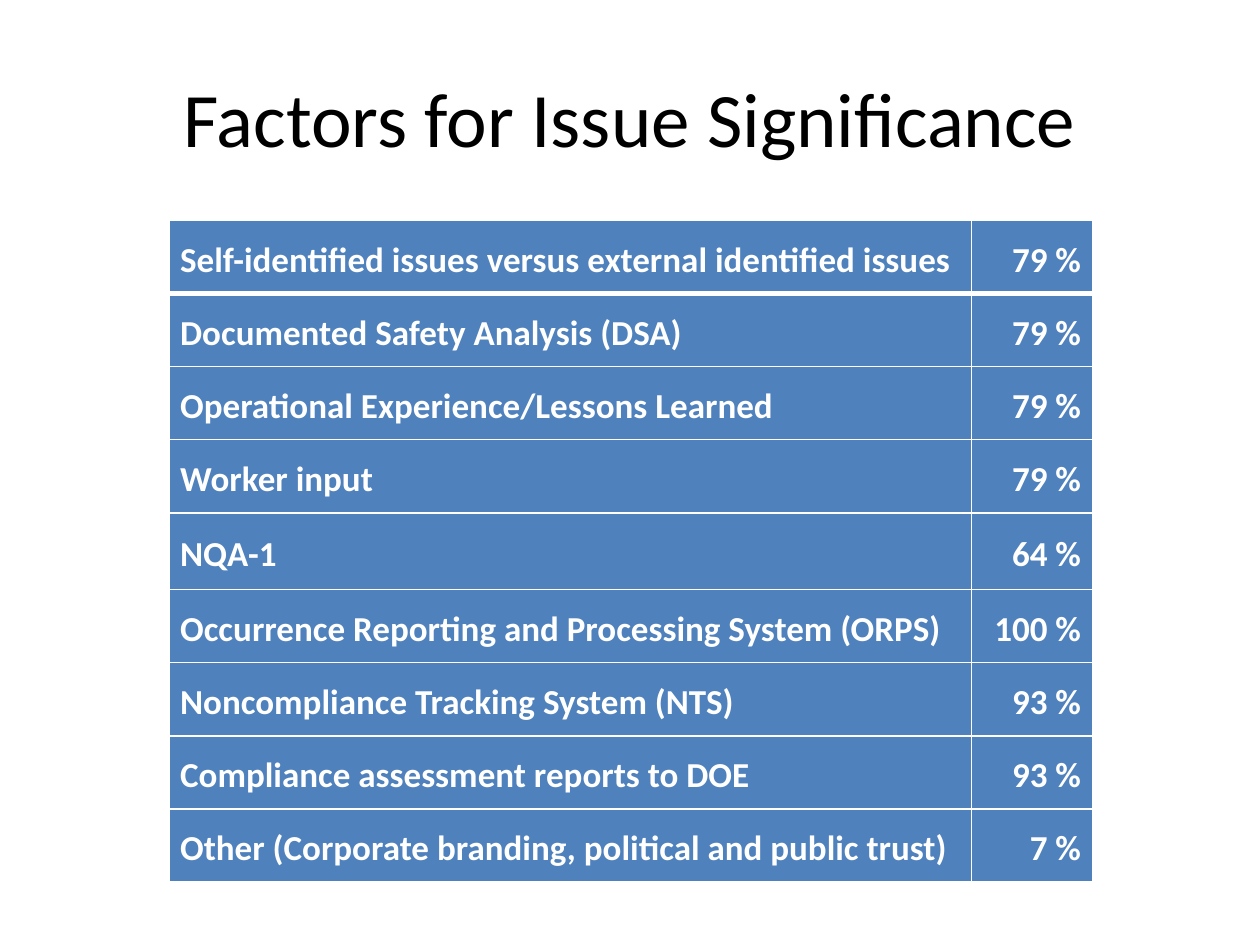
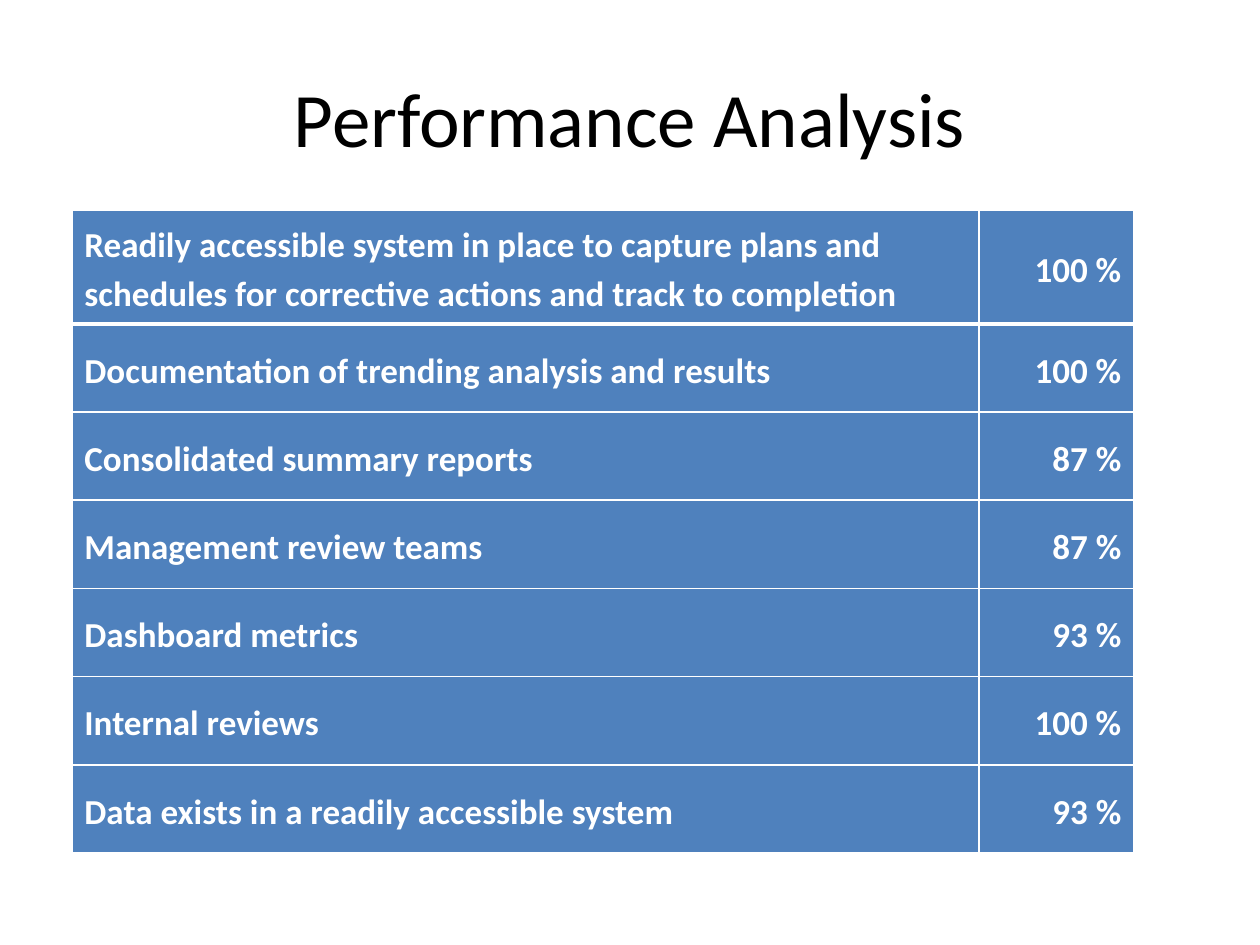
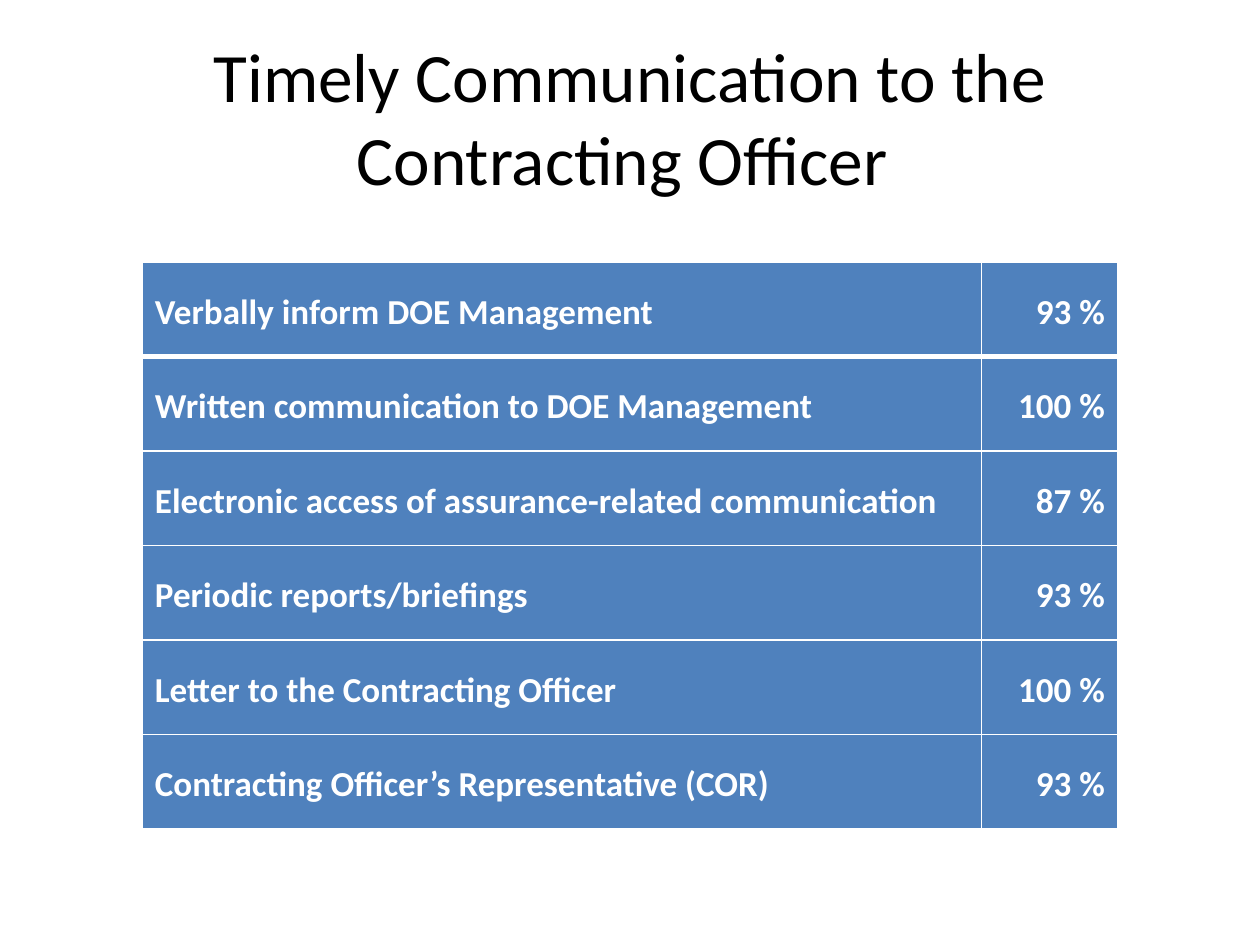
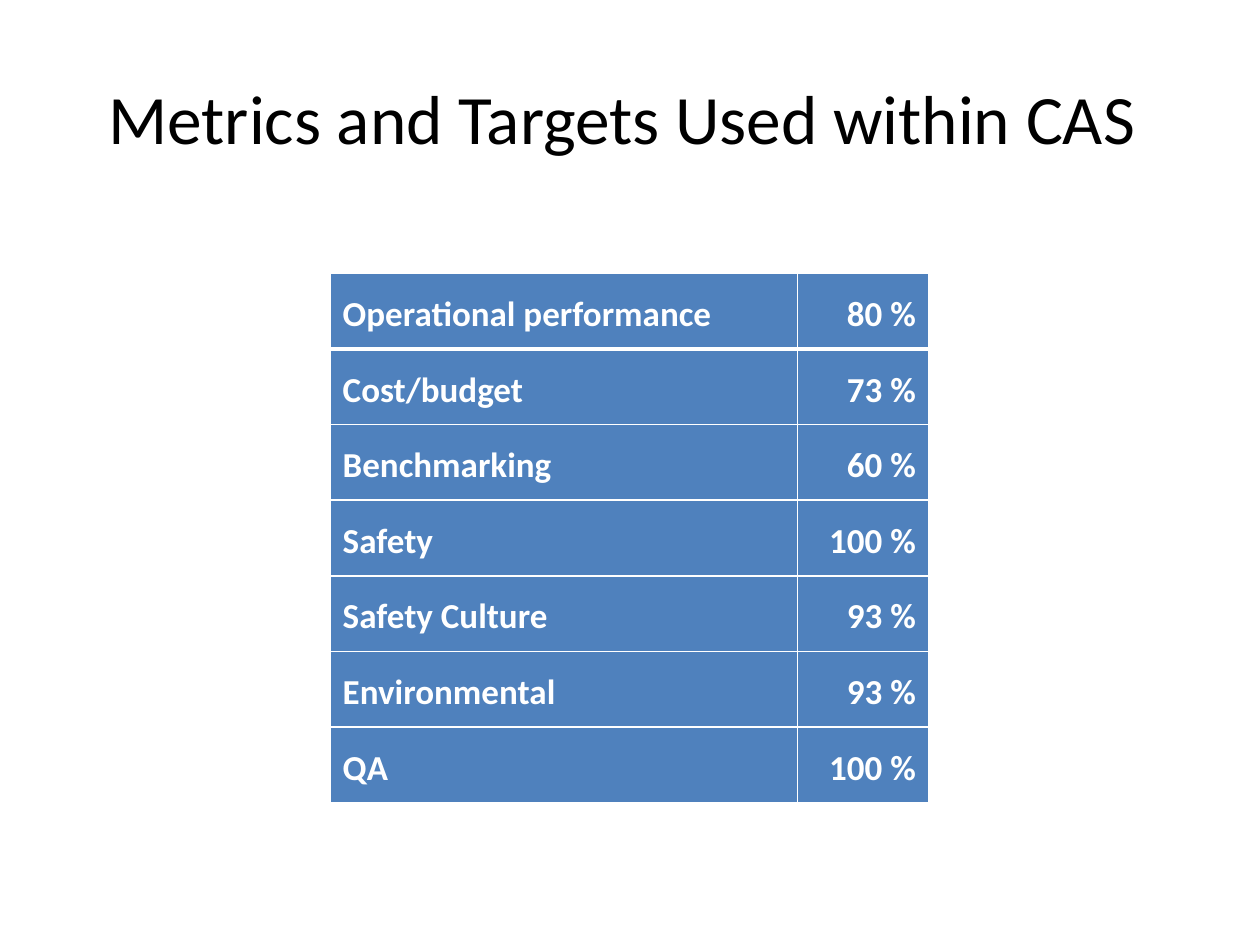
import pptx
import pptx.dml.color
import pptx.enum.text
import pptx.oxml
import pptx.oxml.ns
import pptx.util

Inch = pptx.util.Inches
Align = pptx.enum.text.PP_ALIGN
Middle = pptx.enum.text.MSO_ANCHOR.MIDDLE

WIDE, HIGH = 10, 7.5
COLORS = {"title": "000000", "text": "FFFFFF", "cell": "4F81BD", "rule": "FFFFFF"}
FACE = "Calibri"
TITLE = {"left": 0.05 * WIDE, "top": 0.04 * HIGH, "width": 0.9 * WIDE, "height": HIGH / 6}
BODY = {"name": FACE, "size": pptx.util.Pt(20), "bold": True}
THIN, THICK = 1, 3

# size: title points; at: left and top; cols: column widths; step: row height;
# tall: row heights that differ; pad: side and top insets
SLIDES = [
    {"title": "Factors for Issue Significance", "size": 44,
     "at": (1.34, 1.75), "cols": (6.37, 0.96), "step": 0.58, "tall": {4: 0.61},
     "pad": (0.09, 0.04),
     "rows": [
         ("Self-identified issues versus external identified issues", 79),
         ("Documented Safety Analysis (DSA)", 79),
         ("Operational Experience/Lessons Learned", 79),
         ("Worker input", 79),
         ("NQA-1", 64),
         ("Occurrence Reporting and Processing System (ORPS)", 100),
         ("Noncompliance Tracking System (NTS)", 93),
         ("Compliance assessment reports to DOE", 93),
         ("Other (Corporate branding, political and public trust)", 7)]},
    {"title": "Performance Analysis", "size": 44,
     "at": (0.57, 1.67), "cols": (7.2, 1.23), "step": 0.7, "tall": {0: 0.9},
     "pad": (0.1, 0.05),
     "rows": [
         ("Readily accessible system in place to capture plans and "
          "schedules for corrective actions and track to completion", 100),
         ("Documentation of trending analysis and results", 100),
         ("Consolidated summary reports", 87),
         ("Management review teams", 87),
         ("Dashboard metrics", 93),
         ("Internal reviews", 100),
         ("Data exists in a readily accessible system", 93)]},
    {"title": "Timely Communication to the Contracting Officer ", "size": 39.6,
     "at": (1.13, 2.08), "cols": (6.66, 1.08), "step": 0.75, "tall": {},
     "pad": (0.1, 0.05),
     "rows": [
         ("Verbally inform DOE Management", 93),
         ("Written communication to DOE Management", 100),
         ("Electronic access of assurance-related communication", 87),
         ("Periodic reports/briefings", 93),
         ("Letter to the Contracting Officer", 100),
         ("Contracting Officer’s Representative (COR)", 93)]},
    {"title": "Metrics and Targets Used within CAS ", "size": 39.6,
     "at": (2.62, 2.17), "cols": (3.71, 1.04), "step": 0.6, "tall": {},
     "pad": (0.1, 0.05),
     "rows": [
         ("Operational performance", 80),
         ("Cost/budget", 73),
         ("Benchmarking", 60),
         ("Safety", 100),
         ("Safety Culture", 93),
         ("Environmental", 93),
         ("QA", 100)]},
]


def assign(target, values):
    for key, value in values.items():
        setattr(target, key, value)


def style(font, values, color):
    assign(font, values)
    font.color.rgb = pptx.dml.color.RGBColor.from_string(COLORS[color])


def rule(cell, row):
    """Draw the cell's borders, with a thick line below the first row."""
    widths = {"L": THIN, "R": THIN,
              "T": THICK if row == 1 else THIN,
              "B": THICK if row == 0 else THIN}
    props = cell._tc.get_or_add_tcPr()
    for place, (side, width) in enumerate(widths.items()):
        props.insert(place, pptx.oxml.parse_xml(
            f'<a:ln{side} {pptx.oxml.ns.nsdecls("a")} w="{pptx.util.Pt(width)}">'
            f'<a:solidFill><a:srgbClr val="{COLORS["rule"]}"/></a:solidFill>'
            f'</a:ln{side}>'))


def fill(cell, text, align, pad, row):
    side, edge = map(Inch, pad)
    assign(cell, {"margin_left": side, "margin_right": side, "margin_top": edge,
                  "margin_bottom": edge, "vertical_anchor": Middle, "text": text})
    cell.fill.solid()
    cell.fill.fore_color.rgb = pptx.dml.color.RGBColor.from_string(COLORS["cell"])
    para = cell.text_frame.paragraphs[0]
    assign(para, {"alignment": align, "line_spacing": 1.15})
    style(para.runs[0].font, BODY, "text")
    rule(cell, row)


def add_title(slide, text, size):
    title = slide.shapes.title
    assign(title, {key: Inch(value) for key, value in TITLE.items()})
    frame = title.text_frame
    assign(frame, {"text": text, "vertical_anchor": Middle, "word_wrap": True,
                   "auto_size": pptx.enum.text.MSO_AUTO_SIZE.NONE})
    para = frame.paragraphs[0]
    para.alignment = Align.CENTER
    style(para.runs[0].font, {"name": FACE, "size": pptx.util.Pt(size)}, "title")


def add_grid(slide, data):
    rows, cols = data["rows"], data["cols"]
    highs = [data["tall"].get(row, data["step"]) for row in range(len(rows))]
    box = map(Inch, (*data["at"], sum(cols), sum(highs)))
    table = slide.shapes.add_table(len(rows), len(cols), *box).table
    assign(table, {"first_row": False, "horz_banding": False})
    for col, width in zip(table.columns, cols):
        col.width = Inch(width)
    for row, (label, share) in enumerate(rows):
        table.rows[row].height = Inch(highs[row])
        fill(table.cell(row, 0), label, Align.LEFT, data["pad"], row)
        fill(table.cell(row, 1), f"{share} %", Align.RIGHT, data["pad"], row)


def main():
    deck = pptx.Presentation()
    assign(deck, {"slide_width": Inch(WIDE), "slide_height": Inch(HIGH)})
    layout = deck.slide_layouts.get_by_name("Title Only")
    for data in SLIDES:
        slide = deck.slides.add_slide(layout)
        add_title(slide, data["title"], data["size"])
        add_grid(slide, data)
    deck.save("out.pptx")


if __name__ == "__main__":
    main()
